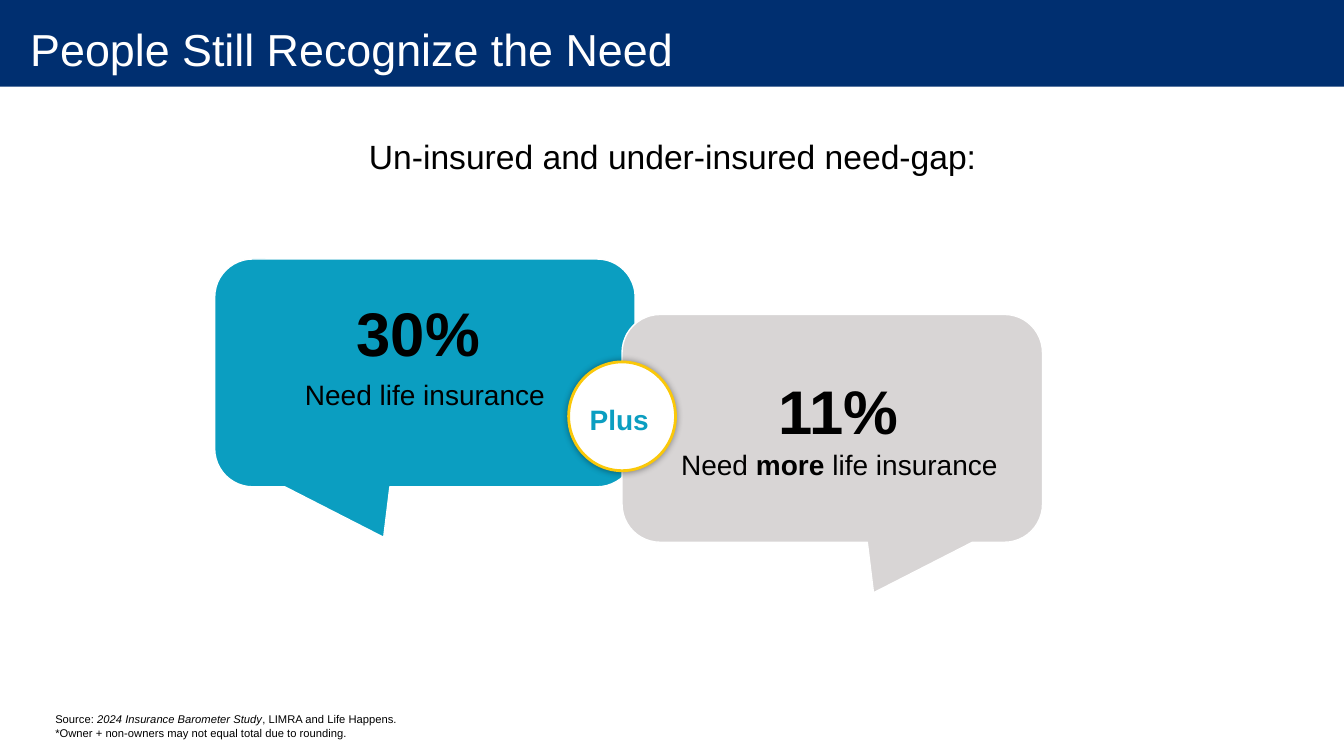
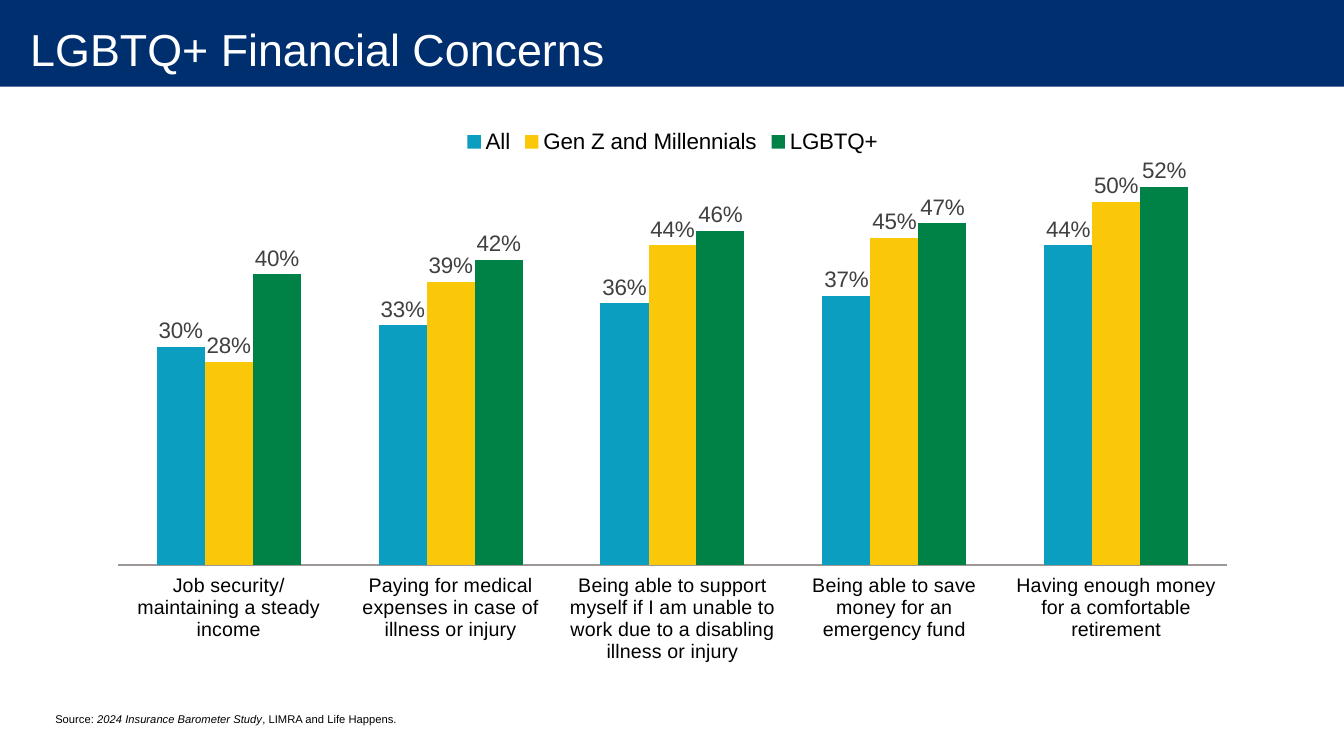
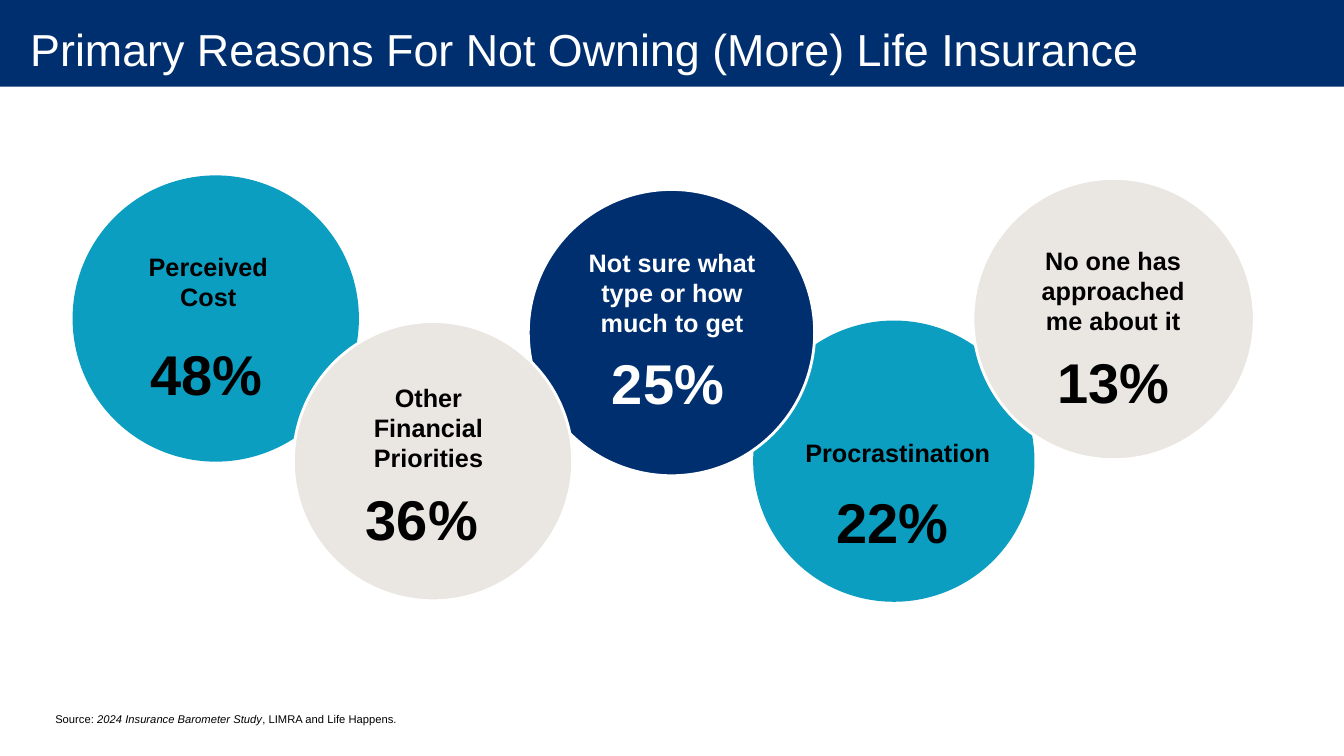
from lxml import etree
from pptx import Presentation
from pptx.chart.data import CategoryChartData
from pptx.dml.color import RGBColor
from pptx.enum.chart import XL_CHART_TYPE as ChartType
from pptx.enum.chart import XL_LABEL_POSITION as LabelPosition
from pptx.enum.chart import XL_LEGEND_POSITION as LegendPosition
from pptx.enum.chart import XL_TICK_LABEL_POSITION as TickLabels
from pptx.enum.chart import XL_TICK_MARK as TickMark
from pptx.enum.shapes import MSO_SHAPE as Shape
from pptx.enum.text import MSO_ANCHOR as Anchor
from pptx.enum.text import MSO_AUTO_SIZE as AutoSize
from pptx.enum.text import PP_ALIGN as Align
from pptx.oxml import parse_xml
from pptx.oxml.ns import nsdecls
from pptx.util import Inches, Pt

FONT = "Arial"
NAVY, TEAL, GOLD, GREEN = "002F70", "0B9EC1", "FAC809", "008145"
WHITE, BLACK, DARK = "FFFFFF", "000000", "404040"
GREY, SAND, AXIS = "D8D5D5", "EAE6E2", "9D9795"
SLIDE_WIDTH, SLIDE_HEIGHT = 13.33, 7.5
SOURCE = [("Source: ", ""), ("2024 Insurance Barometer Study", "i"),
          (", LIMRA and Life Happens.", "")]


def rgb(value):
    return RGBColor.from_string(value)


def style_font(font, size, color=BLACK, bold=None):
    font.name, font.size, font.bold = FONT, Pt(size), bold
    font.color.rgb = rgb(color)


def add_text(slide, box, paragraphs, size, color=BLACK, bold=None, align=Align.LEFT):
    """Each paragraph is a string or a list of (text, "b" / "i" / "") runs."""
    frame = slide.shapes.add_textbox(*map(Inches, box)).text_frame
    frame.word_wrap = True
    frame.auto_size = AutoSize.SHAPE_TO_FIT_TEXT
    for index, content in enumerate(paragraphs):
        paragraph = frame.paragraphs[0] if index == 0 else frame.add_paragraph()
        paragraph.alignment = align
        style_font(paragraph.font, size, color, bold)
        if isinstance(content, str):
            paragraph.add_run().text = content
            continue
        for text, emphasis in content:
            run = paragraph.add_run()
            run.text = text
            if emphasis == "b":
                run.font.bold = True
            elif emphasis == "i":
                run.font.italic = True


def add_shape(slide, kind, box, fill, line=None, line_width=1):
    shape = slide.shapes.add_shape(kind, *map(Inches, box))
    shape.shadow.inherit = False
    shape.fill.solid()
    shape.fill.fore_color.rgb = rgb(fill)
    if line:
        shape.line.color.rgb = rgb(line)
        shape.line.width = Pt(line_width)
    else:
        shape.line.fill.background()
    return shape


def add_callout(slide, box, fill, mirrored=False):
    callout = add_shape(slide, Shape.ROUNDED_RECTANGULAR_CALLOUT, box, fill, WHITE)
    for index, value in enumerate((-0.098, 0.722, 0.167)):
        callout.adjustments[index] = value
    if mirrored:
        callout.element.spPr.xfrm.set("flipH", "1")


def add_glow_shadow(shape):
    """Soft, centred shadow all round the shape."""
    effects = shape.element.spPr.find("{*}effectLst")
    effects.append(parse_xml(
        f'<a:outerShdw {nsdecls("a")} blurRad="{Pt(5)}" dist="0" algn="ctr" rotWithShape="0">'
        f'<a:srgbClr val="{BLACK}"><a:alpha val="40000"/></a:srgbClr></a:outerShdw>'))


def add_band(layout, slide):
    """Draw the title band and move it behind everything on the layout."""
    band = add_shape(slide, Shape.RECTANGLE, (0, 0, SLIDE_WIDTH, 0.86), NAVY)
    layout.shapes.element.insert(2, band.element)


def add_slide(prs, layout, title, notes=()):
    """Slide with its title and source line; notes follow the source."""
    slide = prs.slides.add_slide(layout)
    heading = slide.shapes.title
    heading.left, heading.top = Inches(0), Inches(0)
    heading.width, heading.height = Inches(SLIDE_WIDTH), Inches(0.97)
    frame = heading.text_frame
    frame.text = title
    frame.word_wrap = False
    frame.vertical_anchor = Anchor.MIDDLE
    frame.margin_left, frame.margin_right = Inches(0.3), Inches(0.2)
    frame.margin_top = frame.margin_bottom = 0
    frame.paragraphs[0].alignment = Align.LEFT
    style_font(frame.paragraphs[0].font, 32, WHITE)
    add_text(slide, (0.45, 7.02, 7.44, 0.24 + 0.13 * len(notes)), [SOURCE, *notes], 8)
    return slide


def fill_need_gap(slide):
    add_text(slide, (3.22, 1.3, 6.9, 0.5), ["Un-insured and under-insured need-gap:"],
             24, align=Align.CENTER)
    add_callout(slide, (2.13, 2.57, 4.17, 2.26), TEAL)
    add_callout(slide, (6.17, 3.12, 4.17, 2.26), GREY, mirrored=True)
    for box, share in (((3.14, 2.88, 2.02, 0.84), "30%"), ((7.31, 3.65, 2.02, 0.84), "11%")):
        add_text(slide, box, [share], 44, bold=True, align=Align.CENTER)
    more_needed = [("Need ", ""), ("more ", "b"), ("life insurance", "")]
    for box, need in (((2.61, 3.7, 3.21, 0.44), "Need life insurance"),
                      ((6.63, 4.39, 3.39, 0.44), more_needed)):
        add_text(slide, box, [need], 20, align=Align.CENTER)
    badge = add_shape(slide, Shape.FLOWCHART_CONNECTOR, (5.64, 3.59, 1.06, 1.08),
                      WHITE, GOLD, 2)
    add_glow_shadow(badge)
    add_text(slide, (5.75, 3.94, 1.04, 0.44), ["Plus"], 20, TEAL, bold=True)


def fill_concerns(slide):
    data = CategoryChartData(number_format="0%")
    data.categories = [
        "Job security/maintaining a steady income",
        "Paying for medical expenses in case of illness or injury",
        "Being able to support myself if I am unable to work due to a disabling illness or injury",
        "Being able to save money for an emergency fund",
        "Having enough money for a comfortable retirement",
    ]
    groups = (
        ("All", TEAL, (0.30, 0.33, 0.36, 0.37, 0.44)),
        ("Gen Z and Millennials", GOLD, (0.28, 0.39, 0.44, 0.45, 0.50)),
        ("LGBTQ+", GREEN, (0.40, 0.42, 0.46, 0.47, 0.52)),
    )
    for name, _, shares in groups:
        data.add_series(name, shares)
    chart = slide.shapes.add_chart(ChartType.COLUMN_CLUSTERED,
                                   *map(Inches, (0.94, 1.17, 11.46, 5.52)), data).chart
    style_font(chart.font, 16)
    chart.has_title = False
    chart.has_legend = True
    chart.legend.position = LegendPosition.TOP
    chart.legend.include_in_layout = True
    style_font(chart.legend.font, 16)

    concerns, shares_axis = chart.category_axis, chart.value_axis
    concerns.major_tick_mark = concerns.minor_tick_mark = TickMark.NONE
    concerns.tick_label_position = TickLabels.LOW
    concerns.format.line.color.rgb = rgb(AXIS)
    concerns.format.line.width = Pt(0.75)
    style_font(concerns.tick_labels.font, 14)
    shares_axis.visible = False
    shares_axis.has_major_gridlines = False
    shares_axis.minimum_scale, shares_axis.maximum_scale = 0, 0.6

    plot = chart.plots[0]
    plot.gap_width, plot.overlap = 162, 0
    plot.vary_by_categories = False
    for series, (_, color, _) in zip(plot.series, groups):
        series.format.fill.solid()
        series.format.fill.fore_color.rgb = rgb(color)
        labels = series.data_labels
        labels.show_value = True
        labels.position = LabelPosition.OUTSIDE_END
        labels.number_format, labels.number_format_is_linked = "0%", False
        style_font(labels.font, 16, DARK)


def add_reason(slide, circle, fill, outline, color, reason, reason_box, share, share_box):
    """Circle given as left, top and diameter, with its reason and share."""
    add_shape(slide, Shape.OVAL, (*circle, circle[-1]), fill, outline, 2)
    add_text(slide, reason_box, [reason], 18, color, bold=True, align=Align.CENTER)
    add_text(slide, share_box, [share], 40, color, bold=True)


def fill_reasons(slide):
    reasons = (
        ((0.72, 1.74, 2.84), TEAL, None, BLACK,
         "Perceived Cost", (1.07, 2.44, 1.99, 0.71), "48%", (1.39, 3.32, 1.32, 0.77)),
        ((7.47, 3.18, 2.79), TEAL, None, BLACK,
         "Procrastination", (7.87, 4.29, 2.07, 0.4), "22%", (8.2, 4.79, 1.35, 0.77)),
        ((5.24, 1.88, 2.84), NAVY, WHITE, WHITE,
         "Not sure what type or how much to get", (5.67, 2.4, 1.99, 1.01),
         "25%", (5.97, 3.41, 1.99, 0.77)),
        ((2.91, 3.19, 2.77), SAND, WHITE, BLACK,
         "Other Financial Priorities", (3.28, 3.74, 1.94, 1.01),
         "36%", (3.53, 4.76, 1.36, 0.77)),
        ((9.65, 1.77, 2.79), SAND, WHITE, BLACK,
         "No one has approached me about it", (10.09, 2.38, 1.9, 1.01),
         "13%", (10.39, 3.4, 1.39, 0.77)),
    )
    for reason in reasons:
        add_reason(slide, *reason)


def main():
    prs = Presentation()
    prs.slide_width, prs.slide_height = Inches(SLIDE_WIDTH), Inches(SLIDE_HEIGHT)
    layout = prs.slide_layouts.get_by_name("Title Only")

    need_gap = add_slide(prs, layout, "People Still Recognize the Need",
                         ["*Owner + non-owners may not equal total due to rounding."])
    add_band(layout, need_gap)
    fill_need_gap(need_gap)
    fill_concerns(add_slide(prs, layout, "LGBTQ+ Financial Concerns"))
    fill_reasons(add_slide(prs, layout, "Primary Reasons For Not Owning (More) Life Insurance"))
    prs.save("out.pptx")


if __name__ == "__main__":
    main()
